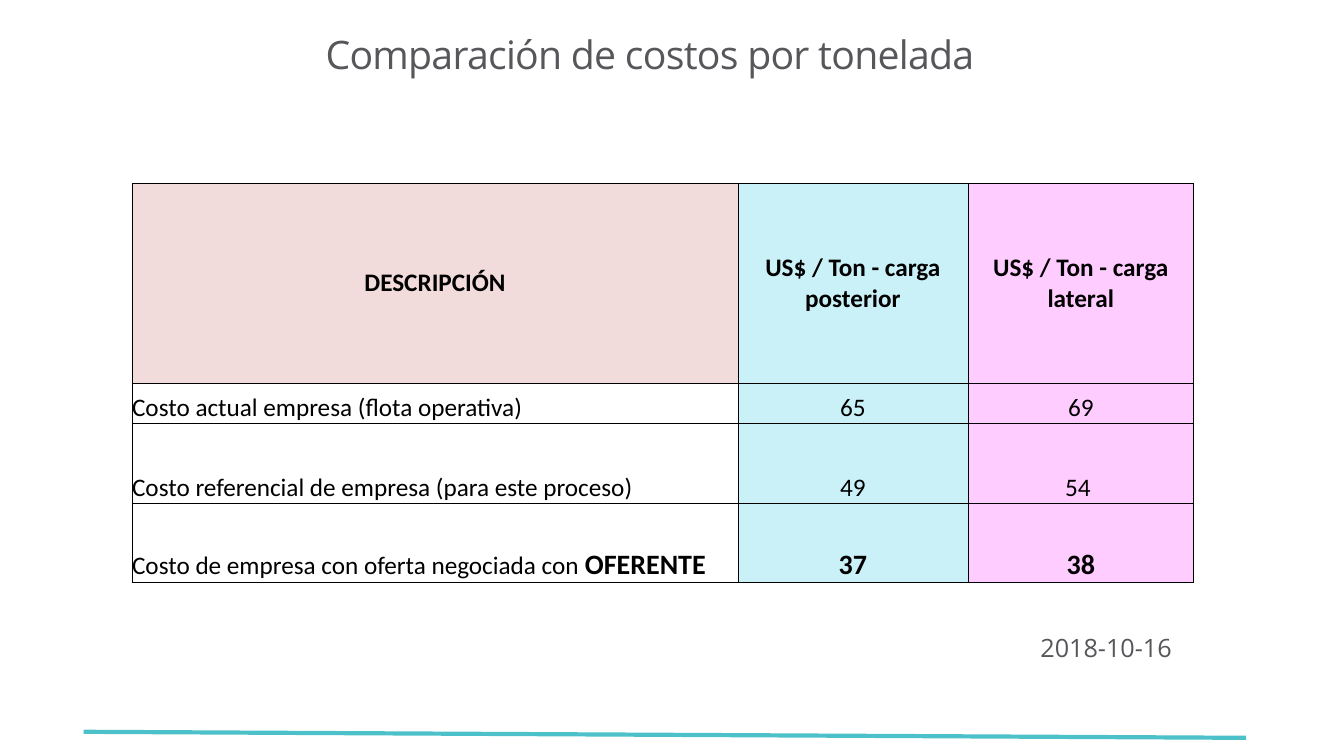
from lxml import etree
from pptx import Presentation, util as u
from pptx.dml.color import RGBColor
from pptx.enum import shapes, text
from pptx.oxml import ns

TITLE = "Comparación de costos por tonelada"
DATE = "2018-10-16"
HEADER = ["DESCRIPCIÓN", "US$ / Ton - carga posterior", "US$ / Ton - carga lateral"]
COSTS = [
    [["Costo actual empresa (flota operativa)"], "65", "69"],
    [["Costo referencial de empresa (para este proceso)"], "49", "54 "],
    [["Costo de empresa con oferta negociada con ", "OFERENTE"], "37", "38"],
]
COLORS = {"gray": "57565A", "black": "000000", "rose": "F2DCDB",
          "aqua": "CBF1F8", "pink": "FFCCFF", "teal": "4CC1C9"}
COLUMN_FILLS = ["rose", "aqua", "pink"]
COLUMN_WIDTHS = [6.01, 2.28, 2.24]
ROW_HEIGHTS = [1.98, 0.4, 0.79, 0.79]
TABLE_LEFT, TABLE_TOP = 1.31, 1.82


def color(name):
    return RGBColor.from_string(COLORS[name])


def add_text(paragraph, content, size=18, font="Calibri", fill="black",
             bold=False, align=text.PP_ALIGN.LEFT):
    run = paragraph.add_run()
    run.text = content
    run.font.size = u.Pt(size)
    run.font.name = font
    run.font.bold = bold
    run.font.color.rgb = color(fill)
    paragraph.alignment = align
    return run


def clear_margins(box):
    box.margin_left = box.margin_right = box.margin_top = box.margin_bottom = 0


def add_borders(cell):
    properties = cell._tc.get_or_add_tcPr()
    for position, side in enumerate(("lnL", "lnR", "lnT", "lnB")):
        line = etree.Element(ns.qn(f"a:{side}"), w=str(u.Pt(0.5)))
        solid = etree.SubElement(line, ns.qn("a:solidFill"))
        etree.SubElement(solid, ns.qn("a:srgbClr"), val=COLORS["black"])
        properties.insert(position, line)


def add_title(slide):
    title = slide.shapes.title
    title.left, title.top = u.Inches(0.78), u.Inches(0.12)
    title.width, title.height = u.Inches(11.33), u.Inches(0.89)
    frame = title.text_frame
    clear_margins(frame)
    frame.word_wrap = True
    frame.auto_size = text.MSO_AUTO_SIZE.NONE
    frame.vertical_anchor = text.MSO_ANCHOR.MIDDLE
    paragraph = frame.paragraphs[0]
    paragraph.line_spacing = 0.86
    run = add_text(paragraph, TITLE, size=28, font="Open Sans", fill="gray",
                   align=text.PP_ALIGN.CENTER)
    run.font._element.set("spc", "-50")


def add_cost_table(slide):
    rows = [HEADER] + COSTS
    table = slide.shapes.add_table(
        len(rows), len(HEADER), u.Inches(TABLE_LEFT), u.Inches(TABLE_TOP),
        u.Inches(sum(COLUMN_WIDTHS)), u.Inches(sum(ROW_HEIGHTS))).table
    table.first_row = table.horz_banding = False
    for column, width in zip(table.columns, COLUMN_WIDTHS):
        column.width = u.Inches(width)
    for row, height in zip(table.rows, ROW_HEIGHTS):
        row.height = u.Inches(height)
    for r, values in enumerate(rows):
        for c, value in enumerate(values):
            cell = table.cell(r, c)
            clear_margins(cell)
            is_header, is_label = r == 0, r > 0 and c == 0
            cell.vertical_anchor = text.MSO_ANCHOR.MIDDLE if is_header else text.MSO_ANCHOR.BOTTOM
            if is_label:
                cell.fill.background()
            else:
                cell.fill.solid()
                cell.fill.fore_color.rgb = color(COLUMN_FILLS[c])
            add_borders(cell)
            pieces = value if is_label else [value]
            for index, piece in enumerate(pieces):
                emphasized = r == len(COSTS) and (c > 0 or index > 0)
                add_text(cell.text_frame.paragraphs[0], piece,
                         size=20 if emphasized else 18, bold=is_header or emphasized,
                         align=text.PP_ALIGN.LEFT if is_label else text.PP_ALIGN.CENTER)


def add_footer(slide):
    rule = slide.shapes.add_connector(
        shapes.MSO_CONNECTOR.STRAIGHT, u.Inches(0.83), u.Inches(7.26),
        u.Inches(12.36), u.Inches(7.32))
    rule.line.color.rgb = color("teal")
    rule.line.width = u.Pt(3)
    etree.SubElement(rule._element.spPr, ns.qn("a:effectLst"))
    date = slide.shapes.add_textbox(u.Inches(10.22), u.Inches(6.22), u.Inches(1.62), u.Inches(0.41))
    date.text_frame.word_wrap = True
    date.text_frame.auto_size = text.MSO_AUTO_SIZE.SHAPE_TO_FIT_TEXT
    add_text(date.text_frame.paragraphs[0], DATE, font="Open Sans", fill="gray")


def main():
    presentation = Presentation()
    presentation.slide_width, presentation.slide_height = u.Inches(13.33), u.Inches(7.5)
    slide = presentation.slides.add_slide(presentation.slide_layouts[5])
    add_title(slide)
    add_cost_table(slide)
    add_footer(slide)
    presentation.save("out.pptx")


if __name__ == "__main__":
    main()
